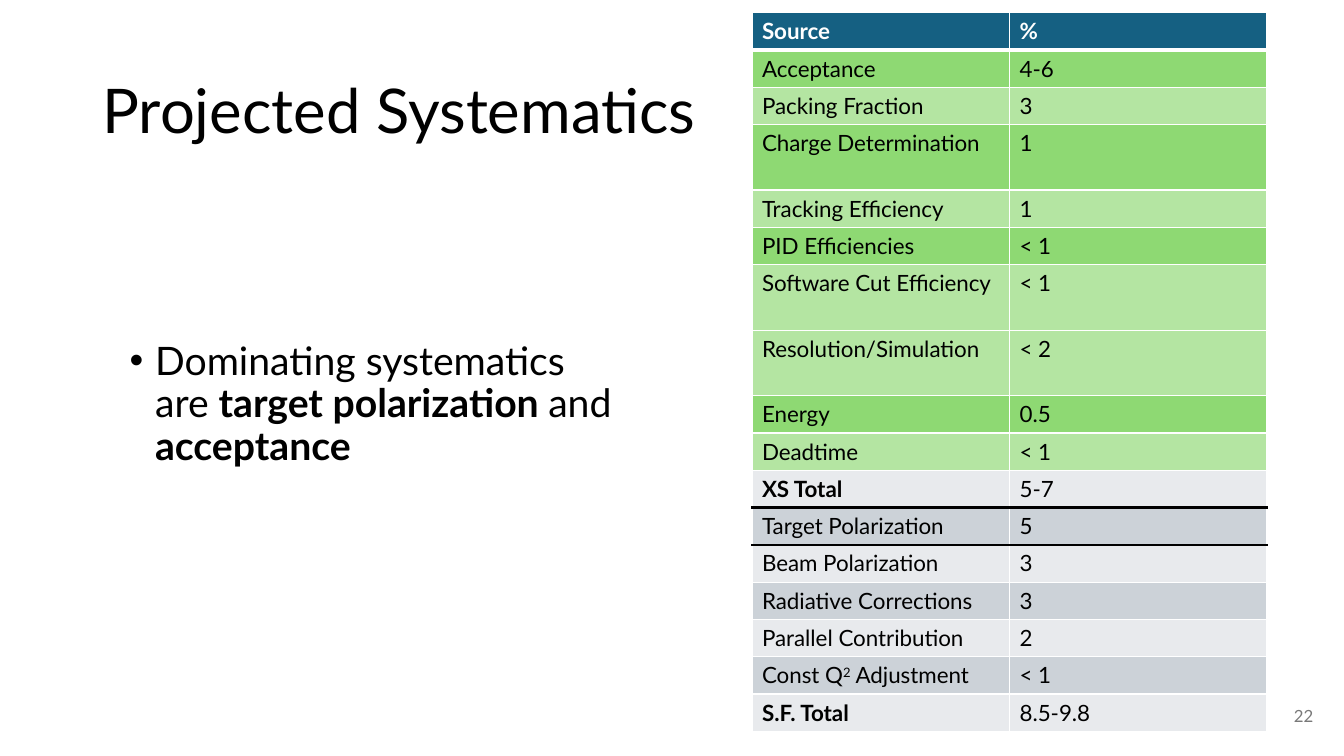
import pptx
import pptx.util
import pptx.dml.color
import pptx.enum.text
import pptx.oxml.ns
from lxml import etree

Cm, Pt = pptx.util.Cm, pptx.util.Pt
ALIGN = pptx.enum.text.PP_ALIGN
ANCHOR = pptx.enum.text.MSO_ANCHOR
FACE = "Lato"
HUES = {
    "white": "FFFFFF", "black": "000000", "blue": "156082", "grey": "797979",
    "green": "8ED973", "mint": "B4E5A2", "pale": "E8EAED", "slate": "CCD2D8",
}

# Source, percent, fill
ROWS = [
    ("Source", "%", "blue"),
    ("Acceptance", "4-6", "green"),
    ("Packing Fraction", "3", "mint"),
    ("Charge Determination", "1", "green"),
    ("Tracking Efficiency", "1", "mint"),
    ("PID Efficiencies", "< 1", "green"),
    ("Software Cut Efficiency", "< 1", "mint"),
    ("Resolution/Simulation", "< 2", "mint"),
    ("Energy", "0.5", "green"),
    ("Deadtime", "< 1", "mint"),
    ("XS Total", "5-7", "pale"),
    ("Target Polarization", "5", "slate"),
    ("Beam Polarization", "3", "pale"),
    ("Radiative Corrections", "3", "slate"),
    ("Parallel Contribution", "2", "pale"),
    ("Const Q^2^ Adjustment", "< 1", "slate"),
    ("S.F. Total", "8.5-9.8", "pale"),
]
TALL = {3, 6, 7}
# Rules below a row, where they differ from the thin white one
RULES = {0: ("white", 3), 10: ("black", 2.25), 11: ("black", 1.5)}


def color(name):
    return pptx.dml.color.RGBColor.from_string(HUES[name])


def style(para, size, hue="black", bold=None):
    para.font.name = FACE
    para.font.size = Pt(size)
    para.font.color.rgb = color(hue)
    para.font.bold = bold


def add_node(host, tag, **attrs):
    return etree.SubElement(host, pptx.oxml.ns.qn(tag), **attrs)


def add_title(slide, text):
    title = slide.shapes.title
    title.left, title.top, title.width, title.height = (
        Cm(2.33), Cm(1.01), Cm(29.21), Cm(3.68))
    frame = title.text_frame
    frame.text = text
    frame.vertical_anchor = ANCHOR.MIDDLE
    para = frame.paragraphs[0]
    para.alignment = ALIGN.LEFT
    para.line_spacing = 0.9
    style(para, 44)


def add_box(slide, left, top, width, height):
    box = slide.shapes.add_textbox(Cm(left), Cm(top), Cm(width), Cm(height))
    box.text_frame.word_wrap = True
    return box.text_frame


def add_point(slide, parts):
    para = add_box(slide, 3.02, 8.48, 12.98, 13.56).paragraphs[0]
    props = para._p.get_or_add_pPr()
    props.set("marL", str(Cm(0.64)))
    props.set("indent", str(-Cm(0.64)))
    add_node(props, "a:buFont", typeface="Arial")
    add_node(props, "a:buChar", char="•")
    para.line_spacing = 0.9
    para.space_before = Pt(10)
    style(para, 28)
    for text, bold in parts:
        run = para.add_run()
        run.text = text
        run.font.bold = bold


def add_edge(cell, side, hue, width):
    line = add_node(cell._tc.get_or_add_tcPr(), "a:ln" + side, w=str(Pt(width)))
    add_node(add_node(line, "a:solidFill"), "a:srgbClr", val=HUES[hue])


def fill_cell(cell, text, hue, bold, head):
    cell.fill.solid()
    cell.fill.fore_color.rgb = color(hue)
    para = cell.text_frame.paragraphs[0]
    style(para, 16, "white" if head else "black", bold)
    # Text between carets is raised
    for spot, part in enumerate(text.split("^")):
        run = para.add_run()
        run.text = part
        if spot % 2:
            run._r.get_or_add_rPr().set("baseline", "30000")


def add_grid(slide):
    frame = slide.shapes.add_table(
        len(ROWS), 2, Cm(18.95), Cm(0.32), Cm(12.98), Cm(18.11))
    table = frame.table
    thin = ("white", 1)
    for col in table.columns:
        col.width = Cm(6.49)
    for i, (name, value, hue) in enumerate(ROWS):
        table.rows[i].height = Cm(1.65 if i in TALL else 0.94)
        for j, text in enumerate((name, value)):
            cell = table.cell(i, j)
            edges = {"L": thin, "R": thin,
                     "T": RULES.get(i - 1, thin), "B": RULES.get(i, thin)}
            for side, edge in edges.items():
                add_edge(cell, side, *edge)
            bold = i == 0 or (j == 0 and name.endswith("Total"))
            fill_cell(cell, text, hue, bold, i == 0)


def add_number(slide, text):
    frame = add_box(slide, 25.73, 17.53, 7.62, 1.01)
    frame.vertical_anchor = ANCHOR.MIDDLE
    para = frame.paragraphs[0]
    para.add_run().text = text
    para.alignment = ALIGN.RIGHT
    style(para, 12, "grey")


def main():
    deck = pptx.Presentation()
    deck.slide_width, deck.slide_height = Cm(33.87), Cm(19.05)
    slide = deck.slides.add_slide(deck.slide_layouts[5])

    # Heading and main point
    add_title(slide, "Projected Systematics")
    add_point(slide, [
        ("Dominating systematics are ", False),
        ("target polarization ", True),
        ("and ", False),
        ("acceptance", True),
    ])

    # Table of uncertainties and slide number
    add_grid(slide)
    add_number(slide, "22")
    deck.save("out.pptx")


if __name__ == "__main__":
    main()
